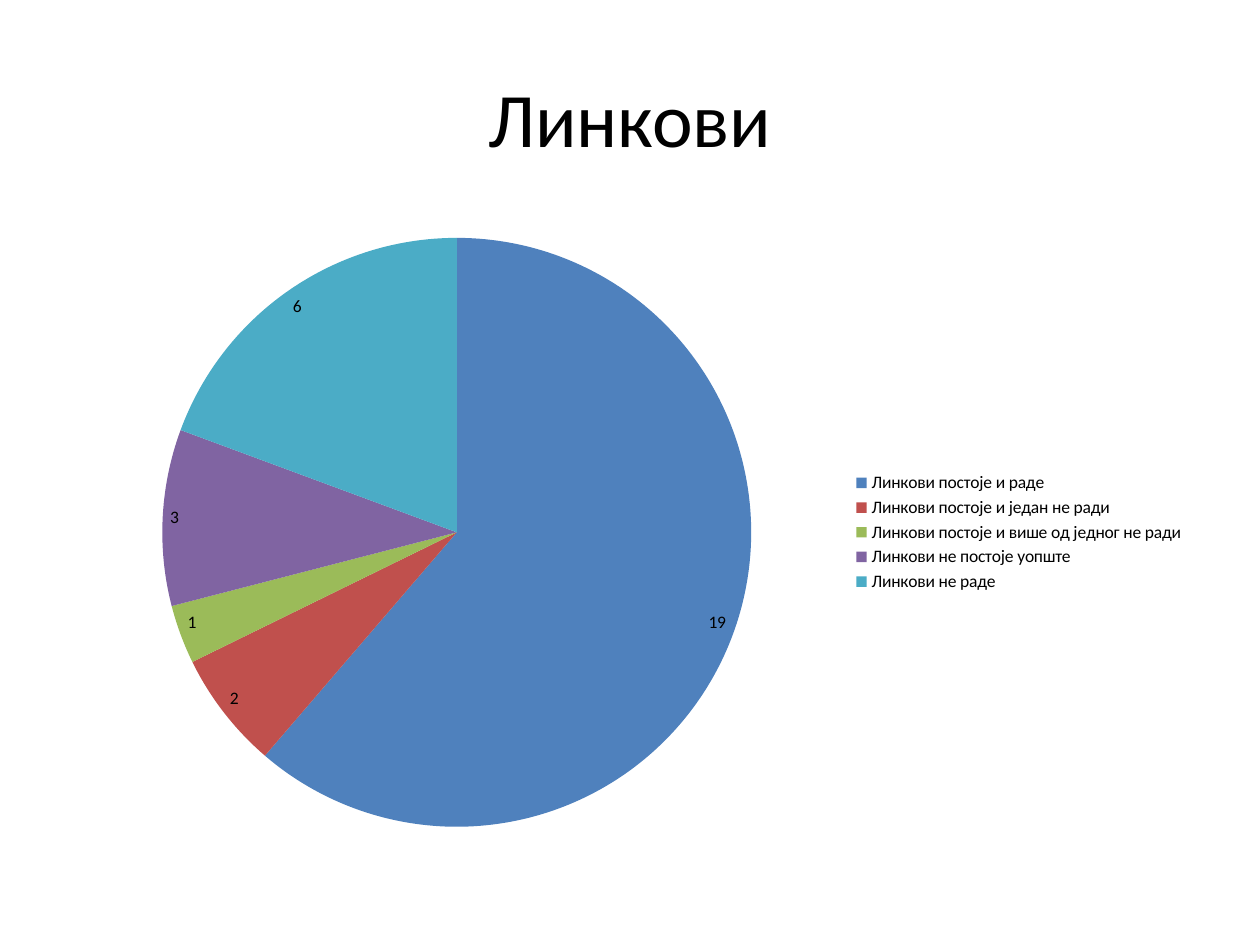
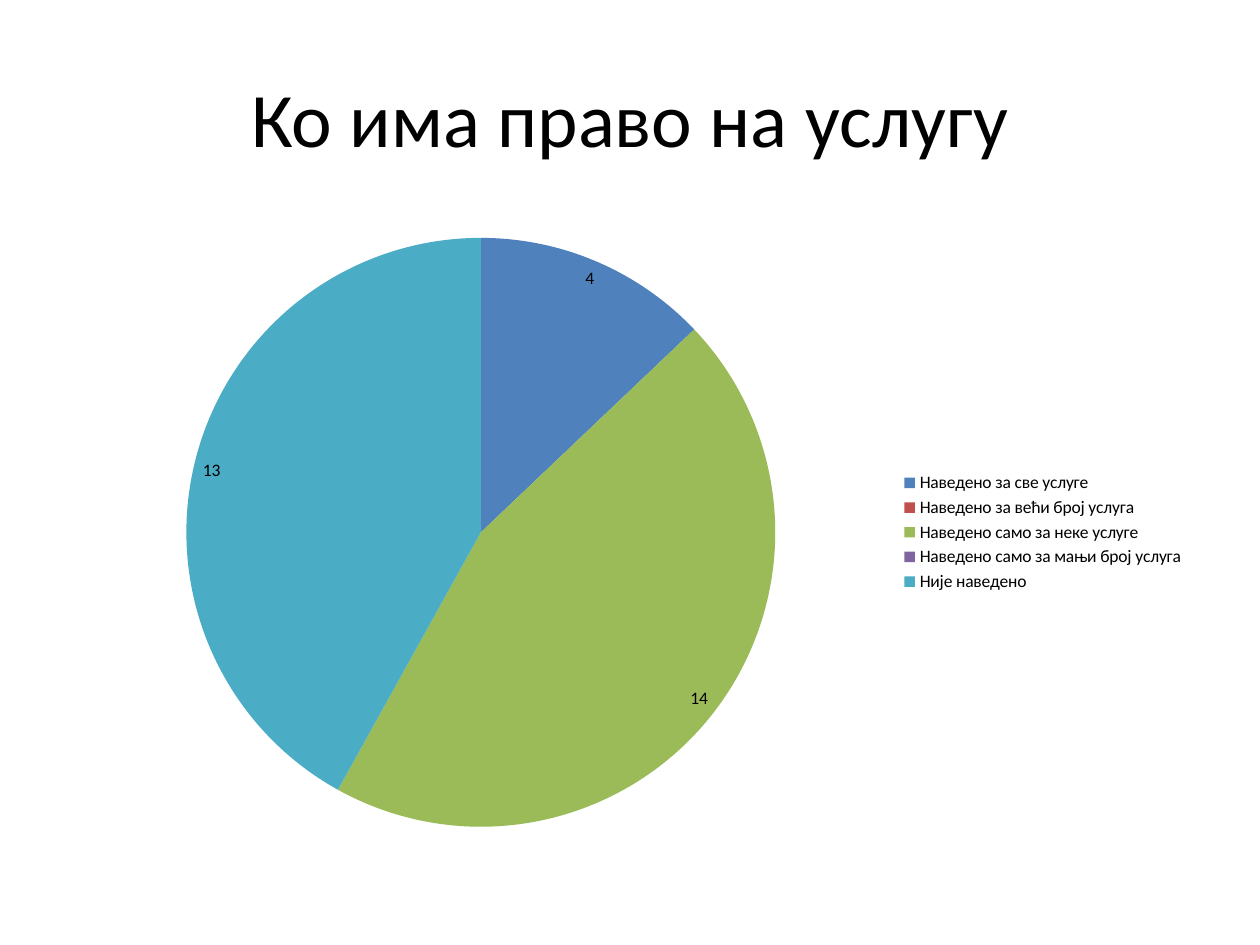
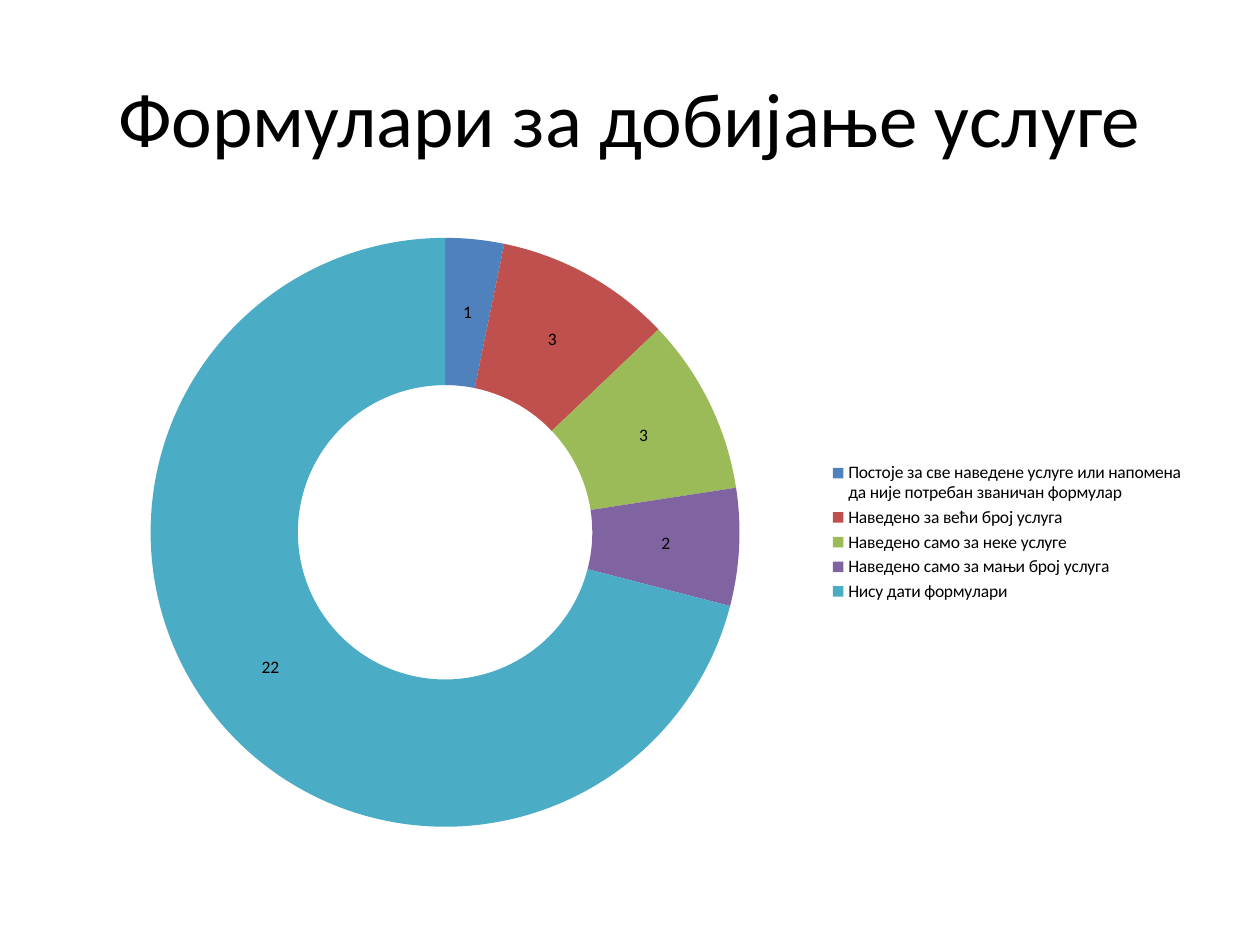
from pptx import Presentation
from pptx.chart.data import CategoryChartData
from pptx.dml.color import RGBColor
from pptx.enum.chart import XL_CHART_TYPE as CT, XL_LABEL_POSITION as LP, XL_LEGEND_POSITION as LEG
from pptx.enum.text import MSO_ANCHOR, PP_ALIGN
from pptx.util import Inches, Pt

WIDTH, HEIGHT = Inches(10), Inches(7.5)
COLS, ROWS = 20, 150
TITLE_BOX = (1, 6, 18, 25)
CHART_BOX = (1, 35, 18, 99)
BLACK = "000000"
SLICE_COLORS = ["4F81BD", "C0504D", "9BBB59", "8064A2", "4BACC6"]
TITLE_FONT = {"name": "Calibri", "size": Pt(44)}
CHART_FONT = {"name": "Calibri", "size": Pt(10)}

SLIDES = [
    ("Линкови", CT.PIE, [
        ("Линкови постоје и раде", 19),
        ("Линкови постоје и један не ради", 2),
        ("Линкови постоје и више од једног не ради", 1),
        ("Линкови не постоје уопште", 3),
        ("Линкови не раде", 6),
    ]),
    ("Ко има право на услугу", CT.PIE, [
        ("Наведено за све услуге", 4),
        ("Наведено за већи број услуга", None),
        ("Наведено само за неке услуге", 14),
        ("Наведено само за мањи број услуга", None),
        ("Није наведено", 13),
    ]),
    ("Формулари за добијање услуге", CT.DOUGHNUT, [
        ("Постоје за све наведене услуге или напомена да није потребан званичан формулар", 1),
        ("Наведено за већи број услуга", 3),
        ("Наведено само за неке услуге", 3),
        ("Наведено само за мањи број услуга", 2),
        ("Нису дати формулари", 22),
    ]),
]


def rgb(color):
    return RGBColor.from_string(color)


def grid(col, row, cols, rows):
    return (WIDTH * col // COLS, HEIGHT * row // ROWS,
            WIDTH * cols // COLS, HEIGHT * rows // ROWS)


def apply(target, values):
    for name, value in values.items():
        setattr(target, name, value)


def style_font(font, values):
    apply(font, values)
    font.color.rgb = rgb(BLACK)


def add_title(s, box, text):
    tf = s.shapes.add_textbox(*grid(*box)).text_frame
    apply(tf, {"word_wrap": True, "vertical_anchor": MSO_ANCHOR.MIDDLE})
    p = tf.paragraphs[0]
    p.alignment = PP_ALIGN.CENTER
    r = p.add_run()
    r.text = text
    style_font(r.font, TITLE_FONT)


def add_answer_chart(s, box, kind, answers):
    data = CategoryChartData()
    data.categories = [label for label, _ in answers]
    data.add_series("Series 1", [count for _, count in answers])
    chart = s.shapes.add_chart(kind, *grid(*box), data).chart
    apply(chart, {"has_title": False, "has_legend": True})
    apply(chart.legend, {"position": LEG.RIGHT, "include_in_layout": False})
    style_font(chart.font, CHART_FONT)
    style_font(chart.legend.font, CHART_FONT)

    plot = chart.plots[0]
    apply(plot, {"vary_by_categories": True, "has_data_labels": True})
    labels = plot.data_labels
    apply(labels, {"show_value": True, "show_percentage": False})
    style_font(labels.font, CHART_FONT)
    if kind == CT.PIE:
        labels.position = LP.INSIDE_END
    for i, color in enumerate(SLICE_COLORS):
        fill = plot.series[0].points[i].format.fill
        fill.solid()
        fill.fore_color.rgb = rgb(color)


def add_chart_slide(prs, title, kind, answers):
    s = prs.slides.add_slide(prs.slide_layouts[6])
    add_title(s, TITLE_BOX, title)
    add_answer_chart(s, CHART_BOX, kind, answers)


def main():
    prs = Presentation()
    apply(prs, {"slide_width": WIDTH, "slide_height": HEIGHT})
    for title, kind, answers in SLIDES:
        add_chart_slide(prs, title, kind, answers)
    prs.save("out.pptx")


if __name__ == "__main__":
    main()
